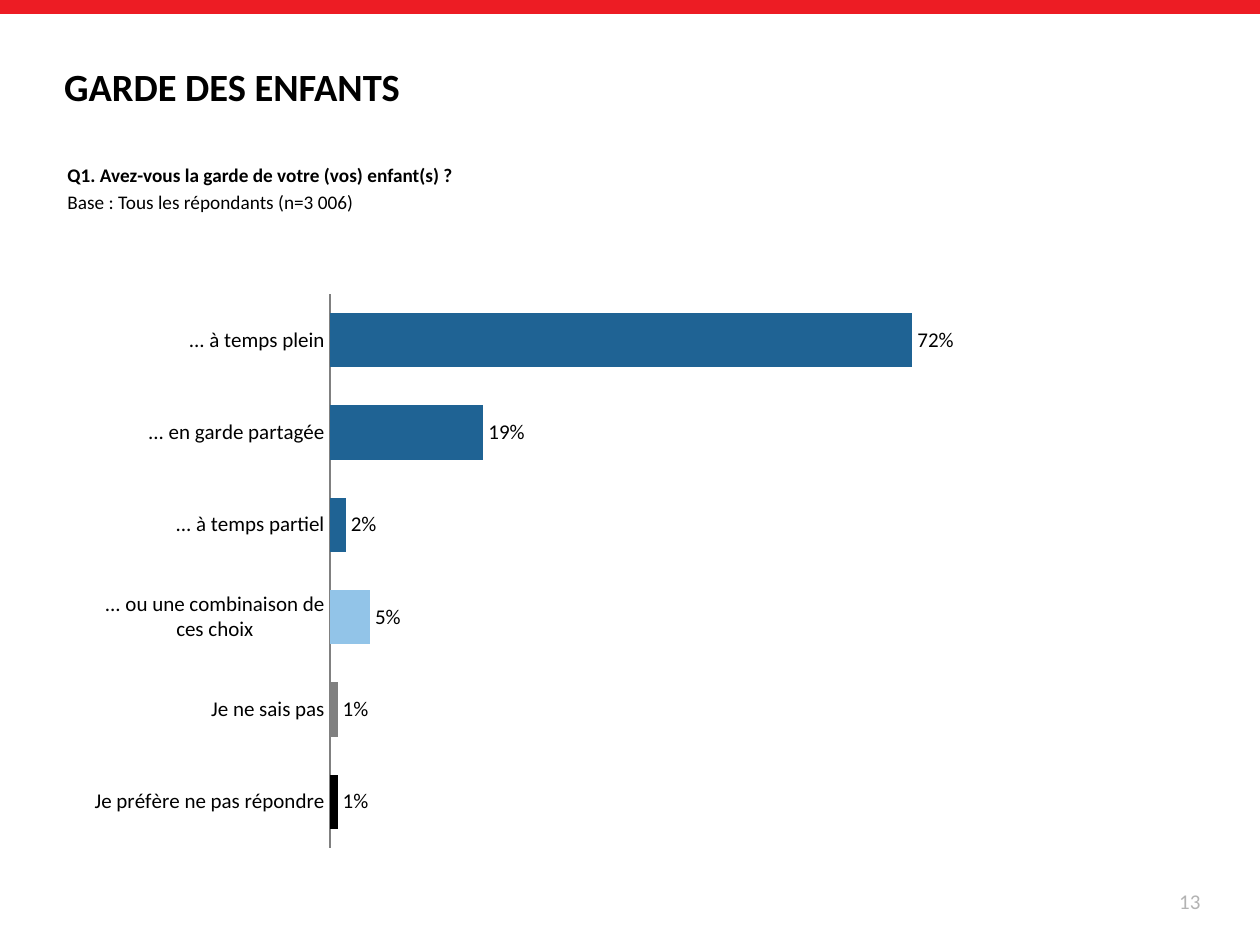
from pptx import Presentation
from pptx import util as u
from pptx.chart.data import CategoryChartData
from pptx.dml.color import RGBColor
from pptx.enum import chart as charts, shapes, text
from pptx.oxml import parse_xml
from pptx.oxml.ns import nsdecls

COLORS = {
    "red": "ED1C24",
    "blue": "1F6394",
    "light_blue": "92C4E8",
    "grey": "808080",
    "pale_grey": "B3B3B3",
    "black": "000000",
}

CUSTODY = [
    ("... à temps plein", 0.72, "blue"),
    ("... en garde partagée", 0.19, "blue"),
    ("... à temps partiel", 0.02, "blue"),
    ("... ou une combinaison de ces choix", 0.05, "light_blue"),
    ("Je ne sais pas", 0.01, "grey"),
    ("Je préfère ne pas répondre", 0.01, "black"),
]


def color(name):
    return RGBColor.from_string(COLORS[name])


def points(*lengths):
    return [u.Pt(length) for length in lengths]


class PageBuilder:
    font = "Calibri"

    def __init__(self, page):
        self.page = page

    def style(self, font, size, bold=False, shade="black"):
        font.name, font.size, font.bold = self.font, u.Pt(size), bold
        font.color.rgb = color(shade)

    def bar(self, left, top, width, height, shade):
        bar = self.page.shapes.add_shape(
            shapes.MSO_SHAPE.RECTANGLE, *points(left, top, width, height))
        bar.shadow.inherit = False
        bar.fill.solid()
        bar.fill.fore_color.rgb = color(shade)
        bar.line.fill.background()

    def title(self, left, top, width, height, wording):
        title = self.page.shapes.title
        title.left, title.top, title.width, title.height = points(left, top, width, height)
        frame = title.text_frame
        frame.text = wording
        frame.auto_size = text.MSO_AUTO_SIZE.NONE
        frame.vertical_anchor = text.MSO_ANCHOR.MIDDLE
        frame.paragraphs[0].alignment = text.PP_ALIGN.LEFT
        self.style(frame.paragraphs[0].font, 22, bold=True)

    def text(self, left, top, width, height, lines, size, align,
             shade="black", anchor=text.MSO_ANCHOR.TOP):
        """Add a text box; lines holds (wording, bold) pairs."""
        box = self.page.shapes.add_textbox(*points(left, top, width, height))
        frame = box.text_frame
        frame.word_wrap = True
        frame.vertical_anchor = anchor
        for index, (wording, bold) in enumerate(lines):
            para = frame.add_paragraph() if index else frame.paragraphs[0]
            para.text = wording
            para.alignment = align
            if index:
                para.space_before = u.Pt(size * 0.2)
            self.style(para.font, size, bold, shade)

    def bar_chart(self, left, top, width, height, rows, plot):
        """Add a percentage bar chart; plot is the inner area as fractions (x, y, w, h)."""
        data = CategoryChartData(number_format="0%")
        data.categories = [label for label, _, _ in rows]
        data.add_series("Series 1", [value for _, value, _ in rows])
        chart = self.page.shapes.add_chart(
            charts.XL_CHART_TYPE.BAR_CLUSTERED,
            *points(left, top, width, height), data).chart
        chart.has_legend = chart.has_title = False
        self.style(chart.font, 12)

        labels_axis, values_axis = chart.category_axis, chart.value_axis
        labels_axis.reverse_order = True
        labels_axis.major_tick_mark = charts.XL_TICK_MARK.NONE
        labels_axis.format.line.color.rgb = color("grey")
        labels_axis.format.line.width = u.Pt(1)
        values_axis.minimum_scale, values_axis.maximum_scale = 0, 1
        values_axis.has_major_gridlines = False
        values_axis.visible = False

        bars = chart.plots[0]
        bars.gap_width = 70
        bars.vary_by_categories = False
        bars.has_data_labels = True
        labels = bars.data_labels
        labels.show_value = True
        labels.position = charts.XL_LABEL_POSITION.OUTSIDE_END
        labels.number_format, labels.number_format_is_linked = "0%", False
        self.style(labels.font, 12)

        series = bars.series[0]
        base = rows[0][2]
        series.format.fill.solid()
        series.format.fill.fore_color.rgb = color(base)
        for index, (_, _, shade) in enumerate(rows):
            if shade != base:
                fill = series.points[index].format.fill
                fill.solid()
                fill.fore_color.rgb = color(shade)
        self.place_plot(chart, plot)

    @staticmethod
    def place_plot(chart, plot):
        area = chart.element.chart.plotArea
        for layout in area.xpath("c:layout"):
            area.remove(layout)
        modes = "".join(f'<c:{side}Mode val="edge"/>' for side in "xy")
        sizes = "".join(f'<c:{side} val="{part}"/>' for side, part in zip("xywh", plot))
        area.insert(0, parse_xml(
            f'<c:layout {nsdecls("c")}><c:manualLayout><c:layoutTarget val="inner"/>'
            f'{modes}{sizes}</c:manualLayout></c:layout>'))


def main():
    deck = Presentation()
    deck.slide_width, deck.slide_height = points(720, 540)
    builder = PageBuilder(deck.slides.add_slide(deck.slide_layouts[5]))

    builder.bar(0, 0, 720, 8, "red")
    builder.title(29.5, 30.5, 551.5, 37.5, "GARDE DES ENFANTS")
    builder.text(
        31.5, 90, 579, 83,
        [("Q1. Avez-vous la garde de votre (vos) enfant(s) ?", True),
         ("Base : Tous les répondants (n=3 006)", False)],
        11, text.PP_ALIGN.JUSTIFY)
    builder.bar_chart(45.5, 147.5, 605.5, 337.5, CUSTODY, (0.236, 0.061, 0.764, 0.939))
    builder.text(525, 500.5, 168, 29, [("13", False)], 12, text.PP_ALIGN.RIGHT,
                 "pale_grey", text.MSO_ANCHOR.MIDDLE)

    deck.save("out.pptx")


if __name__ == "__main__":
    main()
